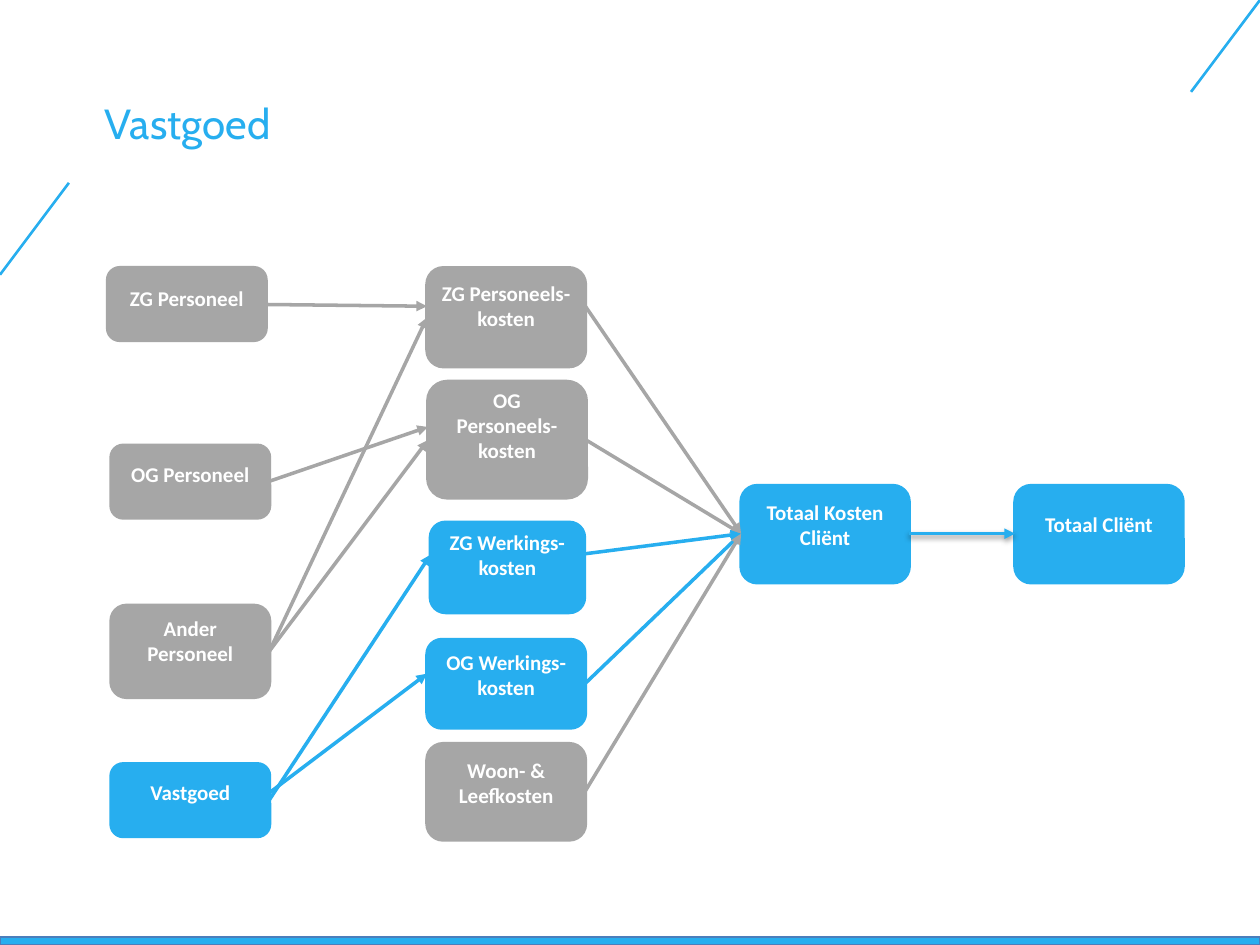
"""Build the Vastgoed cost flow slide."""
from lxml import etree
from pptx import Presentation
from pptx.dml.color import RGBColor
from pptx.enum import shapes, text
from pptx.oxml.ns import qn
from pptx.util import Pt

THEME = {
    "blue": RGBColor.from_string("27AEEF"),
    "grey": RGBColor.from_string("A6A6A6"),
    "edge": RGBColor.from_string("4B7EBC"),
    "white": RGBColor.from_string("FFFFFF"),
    "head": ("Cabin", 24),
    "label": ("Calibri", 12),
    "line": 2,
    "slant": 1.5,
}
TITLE = "Vastgoed"
BAR = (0, 535.5, 720, 4.5)
SLANTS = [((39.4, 104.5), (0, 157)), ((720, 0), (680.6, 52.5))]

# key: label, colour, left, top, width, height, text drop, side inset
BOXES = {
    "zg": ("ZG Personeel", "grey", 61.5, 153, 90.5, 41.5, 10, 4),
    "og": ("OG Personeel", "grey", 63.5, 254.5, 90.5, 41.5, 9.5, 4),
    "ander": ("Ander Personeel", "grey", 63.5, 346, 90.5, 52.5, 6, 4),
    "vast": ("Vastgoed", "blue", 63.5, 436.5, 90.5, 41.5, 9, 4),
    "zgp": ("ZG Personeels-kosten", "grey", 244, 153, 90.5, 56.5, 7.5, 4),
    "ogp": ("OG Personeels-kosten", "grey", 244.5, 218, 90.5, 66.5, 3.5, 5),
    "zgw": ("ZG Werkings-kosten", "blue", 246, 298.5, 88, 51.5, 4, 4),
    "ogw": ("OG Werkings-kosten", "blue", 244, 365.5, 90.5, 50.5, 5.5, 4),
    "woon": ("Woon- & Leefkosten", "grey", 244, 425, 90.5, 55, 8, 4),
    "kost": ("Totaal Kosten Cliënt", "blue", 423.5, 277.5, 96, 55.5, 8, 4),
    "tot": ("Totaal Cliënt", "blue", 580, 277.5, 96, 55.5, 15, 4),
}
FLOWS = [
    ("zg", 174, "zgp", 175),
    ("og", 275, "ogp", 244),
    ("ander", 372, "ogp", 251.5),
    ("ander", 372, "zgp", 181.5),
    ("vast", 453, "ogw", 385),
    ("vast", 457, "zgw", 317),
    ("ogp", 251.5, "kost", 305),
    ("zgw", 316.5, "kost", 305),
    ("ogw", 390.5, "kost", 305),
    ("woon", 452, "kost", 305),
    ("zgp", 175, "kost", 305),
    ("kost", 305, "tot", 305),
]
SHADE = {"blurRad": Pt(3.1), "dist": Pt(1.6), "dir": 90 * 60000}


def write(para, words, font, tint, bold=False):
    run = para.add_run()
    run.text = words
    run.font.name, size = THEME[font]
    run.font.size = Pt(size)
    run.font.bold = bold
    run.font.color.rgb = THEME[tint]


def block(slide, kind, place, fill, edge, width):
    shape = slide.shapes.add_shape(kind, *map(Pt, place))
    shape.shadow.inherit = False
    shape.fill.solid()
    shape.fill.fore_color.rgb = THEME[fill]
    shape.line.color.rgb = THEME[edge]
    shape.line.width = Pt(width)
    return shape


def node(slide, label, tint, left, top, width, height, drop, side):
    kind = shapes.MSO_SHAPE.ROUNDED_RECTANGLE
    shape = block(slide, kind, (left, top, width, height), tint, tint, THEME["line"])
    frame = shape.text_frame
    frame.word_wrap = True
    frame.vertical_anchor = text.MSO_ANCHOR.TOP
    frame.margin_left = frame.margin_right = Pt(side)
    frame.margin_top = Pt(max(0, drop - 0.05 * height))
    frame.margin_bottom = 0
    para = frame.paragraphs[0]
    para.alignment = text.PP_ALIGN.CENTER
    write(para, label, "label", "white", True)


def stroke(slide, start, end, tint, width, arrow=False, shade=False):
    kind = shapes.MSO_CONNECTOR.STRAIGHT
    line = slide.shapes.add_connector(kind, *map(Pt, start + end))
    line.line.color.rgb = THEME[tint]
    line.line.width = Pt(width)
    if arrow:
        etree.SubElement(line.line._get_or_add_ln(), qn("a:tailEnd"), type="triangle")
    glow = etree.SubElement(line._element.spPr, qn("a:effectLst"))
    if shade:
        cast = etree.SubElement(glow, qn("a:outerShdw"), rotWithShape="0",
                                **{key: str(val) for key, val in SHADE.items()})
        tone = etree.SubElement(cast, qn("a:srgbClr"), val="000000")
        etree.SubElement(tone, qn("a:alpha"), val="38000")


def flow(slide, src, out, dst, into):
    left, width = BOXES[src][2], BOXES[src][4]
    tint = "grey" if "grey" in (BOXES[src][1], BOXES[dst][1]) else "blue"
    stroke(slide, (left + width, out), (BOXES[dst][2], into), tint,
           THEME["line"], arrow=True, shade=dst == "tot")


def head(slide):
    title = slide.shapes.title
    title.left, title.top, title.width, title.height = map(Pt, (52.5, 52, 596, 45))
    frame = title.text_frame
    frame.word_wrap = True
    frame.vertical_anchor = text.MSO_ANCHOR.TOP
    para = frame.paragraphs[0]
    para.alignment = text.PP_ALIGN.LEFT
    write(para, TITLE, "head", "blue")


def main():
    deck = Presentation()
    deck.slide_width, deck.slide_height = Pt(720), Pt(540)
    slide = deck.slides.add_slide(deck.slide_layouts[5])
    block(slide, shapes.MSO_SHAPE.RECTANGLE, BAR, "blue", "edge", 0.75)
    for start, end in SLANTS:
        stroke(slide, start, end, "blue", THEME["slant"])
    head(slide)
    for box in BOXES.values():
        node(slide, *box)
    for link in FLOWS:
        flow(slide, *link)
    deck.save("out.pptx")


if __name__ == "__main__":
    main()
